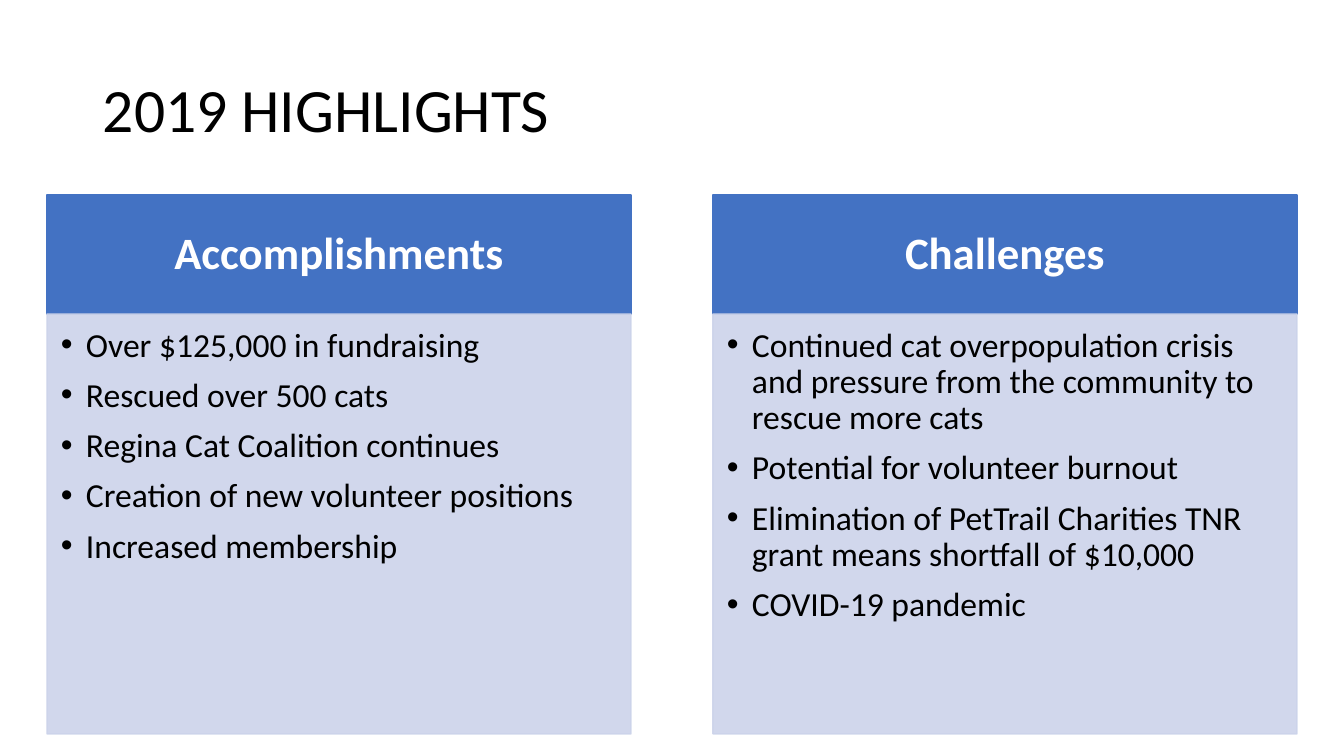
from pptx import Presentation
from pptx.dml.color import RGBColor
from pptx.enum.shapes import MSO_SHAPE
from pptx.enum.text import MSO_ANCHOR, PP_ALIGN
from pptx.oxml.ns import qn
from pptx.oxml.xmlchemy import OxmlElement
from pptx.util import Emu, Pt

TITLE = "2019 HIGHLIGHTS"
COLUMNS = [
    ("Accomplishments", [
        "Over $125,000 in fundraising",
        "Rescued over 500 cats",
        "Regina Cat Coalition continues",
        "Creation of new volunteer positions",
        "Increased membership",
    ]),
    ("Challenges", [
        "Continued cat overpopulation crisis and pressure from the community to rescue more cats",
        "Potential for volunteer burnout",
        "Elimination of PetTrail Charities TNR grant means shortfall of $10,000",
        "COVID-19 pandemic",
    ]),
]
BLACK, WHITE, BLUE, PALE = "000000", "FFFFFF", "4372C3", "CCD3EA"
LEFT, TOP, WIDTH, GAP = 47, 195, 584, 82
HEAD_H, BODY_H = 119, 420
INDENT = 25


def px(n):
    return Emu(round(n * 914400 / 100.8))


def rgb(value):
    return RGBColor.from_string(value)


def add_panel(slide, box, color, opacity=100):
    sp = slide.shapes.add_shape(MSO_SHAPE.RECTANGLE, *map(px, box))
    sp.shadow.inherit = False
    sp.fill.solid()
    sp.fill.fore_color.rgb = rgb(color)
    sp.line.color.rgb = rgb(color)
    sp.line.width = Pt(1)
    if opacity < 100:
        for clr in sp._element.spPr.iter(qn("a:srgbClr")):
            alpha = OxmlElement("a:alpha")
            alpha.set("val", str(opacity * 1000))
            clr.append(alpha)
    return sp


def add_bullet(p):
    pPr = p._p.get_or_add_pPr()
    pPr.set("marL", str(px(INDENT)))
    pPr.set("indent", str(-px(INDENT)))
    for tag, key, value in (("a:buFont", "typeface", "Arial"), ("a:buChar", "char", "•")):
        el = OxmlElement(tag)
        el.set(key, value)
        pPr.append(el)


def write(sp, lines, size, color, insets, anchor, align=PP_ALIGN.LEFT, bold=False, bullets=False):
    tf = sp.text_frame
    tf.word_wrap = True
    tf.vertical_anchor = anchor
    tf.margin_left, tf.margin_top, tf.margin_right, tf.margin_bottom = map(px, insets)
    for i, line in enumerate(lines):
        p = tf.paragraphs[0] if i == 0 else tf.add_paragraph()
        p.text = line
        p.alignment = align
        p.line_spacing = 0.9
        if i:
            p.space_before = Pt(10)
        if bullets:
            add_bullet(p)
        font = p.runs[0].font
        font.name, font.size, font.bold = "Calibri", Pt(size), bold
        font.color.rgb = rgb(color)


prs = Presentation()
prs.slide_width, prs.slide_height = px(1344), px(756)
slide = prs.slides.add_slide(prs.slide_layouts[6])

title = slide.shapes.add_textbox(*map(px, (93, 40, 1159, 146)))
write(title, [TITLE], 44, BLACK, (10, 5, 10, 5), MSO_ANCHOR.MIDDLE)

for i, (heading, points) in enumerate(COLUMNS):
    x = LEFT + i * (WIDTH + GAP)
    head = add_panel(slide, (x, TOP, WIDTH, HEAD_H), BLUE)
    write(head, [heading], 32, WHITE, (25, 14, 25, 14), MSO_ANCHOR.MIDDLE, PP_ALIGN.CENTER, bold=True)
    body = add_panel(slide, (x, TOP + HEAD_H, WIDTH, BODY_H), PALE, opacity=90)
    write(body, points, 24, BLACK, (14, 14, 19, 21), MSO_ANCHOR.TOP, bullets=True)

prs.save("out.pptx")
